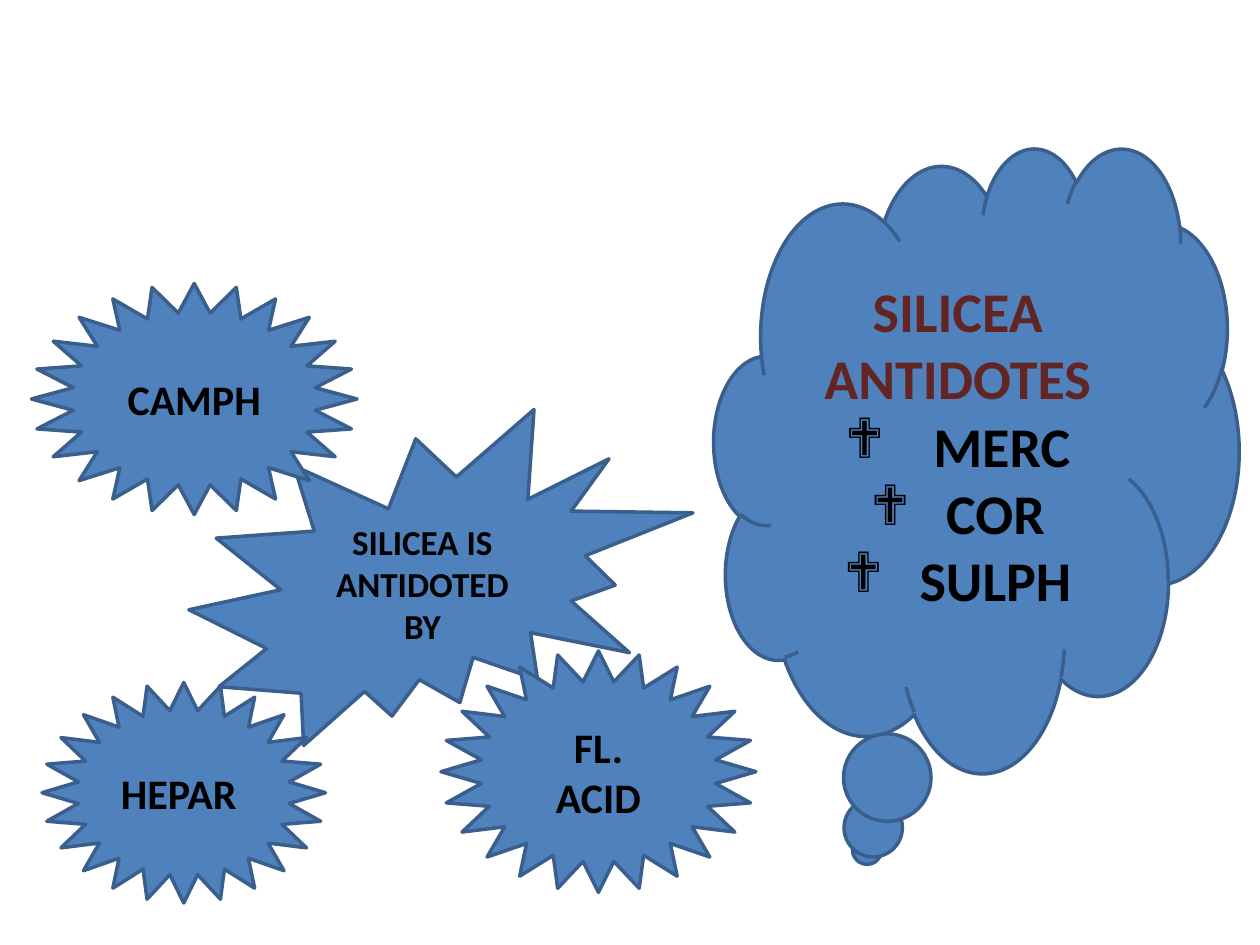
from pptx import Presentation
from pptx.dml.color import RGBColor
from pptx.enum.shapes import MSO_SHAPE
from pptx.enum.text import MSO_ANCHOR, PP_ALIGN
from pptx.oxml.ns import qn
from pptx.util import Inches, Pt
from lxml.etree import SubElement

COLORS = {"fill": "4F81BD", "line": "3A5F8C", "text": "000000", "heading": "632523"}

presentation = Presentation()
presentation.slide_width, presentation.slide_height = Inches(10), Inches(7.5)
slide = presentation.slides.add_slide(presentation.slide_layouts[6])

# Grid of 120 columns by 90 rows
CELL = presentation.slide_width / 120


def add_remedy(preset, grid_box, lines, size, align=PP_ALIGN.CENTER):
    """Add a filled shape at (column, row, columns, rows) with bold lines of text."""
    shape = slide.shapes.add_shape(preset, *(round(n * CELL) for n in grid_box))
    shape.shadow.inherit = False
    shape.fill.solid()
    shape.fill.fore_color.rgb = RGBColor.from_string(COLORS["fill"])
    shape.line.color.rgb = RGBColor.from_string(COLORS["line"])
    shape.line.width = Pt(2)
    text_frame = shape.text_frame
    text_frame.text = "\n".join(lines)
    text_frame.word_wrap = True
    text_frame.vertical_anchor = MSO_ANCHOR.MIDDLE
    for paragraph in text_frame.paragraphs:
        paragraph.alignment = align
        for run in paragraph.runs:
            run.font.name = "Calibri"
            run.font.size = Pt(size)
            run.font.bold = True
            run.font.color.rgb = RGBColor.from_string(COLORS["text"])
    return shape


# Central burst and the remedies that antidote Silicea
add_remedy(MSO_SHAPE.EXPLOSION2, (18, 39, 48, 32), ["SILICEA IS", "ANTIDOTED", "BY"], 20)
for name, grid_box, align in [
    ("CAMPH", (3, 27, 31, 22), PP_ALIGN.CENTER),
    ("HEPAR", (4, 65, 27, 21), PP_ALIGN.LEFT),
    ("FL. ACID", (42, 62, 30, 23), PP_ALIGN.CENTER),
]:
    add_remedy(MSO_SHAPE.STAR_24_POINT, grid_box, [name], 24, align)

# Cloud with the remedies that Silicea antidotes
cloud = add_remedy(MSO_SHAPE.CLOUD_CALLOUT, (68, 14, 50, 59.5),
                   ["SILICEA ANTIDOTES", "MERC", "COR", "SULPH"], 32)
heading, *remedies = cloud.text_frame.paragraphs
heading.runs[0].font.color.rgb = RGBColor.from_string(COLORS["heading"])

# Diamond bullets with a hanging indent
for paragraph, indent in zip(remedies, (0.7, 0.6, 0.6)):
    properties = paragraph._p.get_or_add_pPr()
    properties.set("marL", str(Inches(indent)))
    properties.set("indent", str(-Inches(indent)))
    SubElement(properties, qn("a:buFont"), typeface="Wingdings")
    SubElement(properties, qn("a:buChar"), char="❖")

presentation.save("out.pptx")
